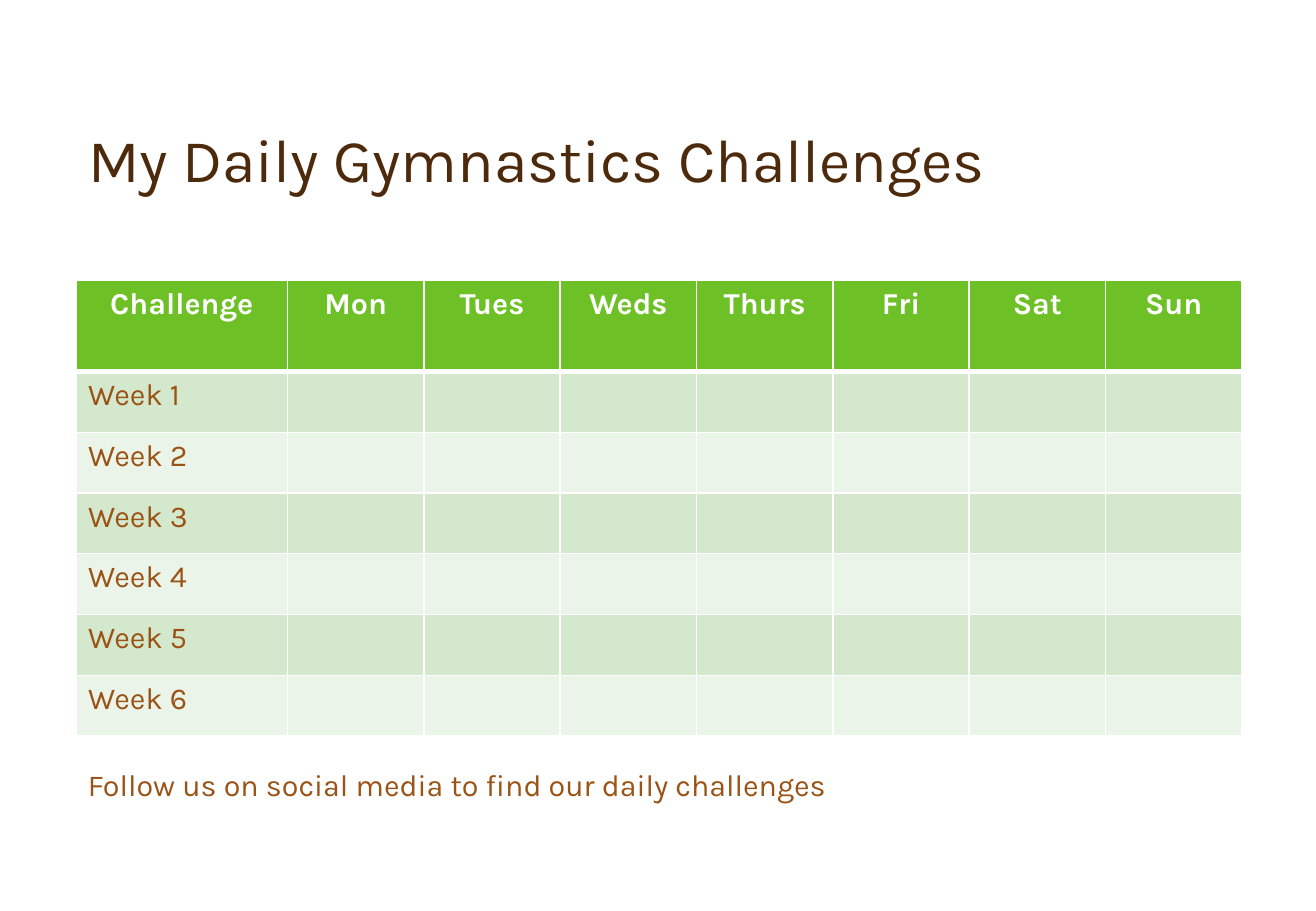
from lxml.etree import SubElement
from pptx import Presentation
from pptx.dml.color import RGBColor
from pptx.enum.text import MSO_ANCHOR as Anchor, MSO_AUTO_SIZE as AutoSize, PP_ALIGN as Align
from pptx.oxml.ns import qn
from pptx.util import Cm, Pt

FONT = "Karla"
DARK_BROWN = RGBColor(0x4D, 0x2A, 0x0B)
BROWN = RGBColor(0x9A, 0x53, 0x15)
WHITE = RGBColor(0xFF, 0xFF, 0xFF)
GREEN = RGBColor(0x6D, 0xC0, 0x25)
BANDS = (RGBColor(0xEB, 0xF4, 0xE8), RGBColor(0xD4, 0xE8, 0xCD))

LEFT, WIDTH = Cm(1.59), Cm(24.37)
HEADINGS = ("Challenge", "Mon", "Tues", "Weds", "Thurs", "Fri", "Sat", "Sun")
WEEKS = 6


def write(frame, text, size, color, bold=False, align=Align.LEFT):
    para = frame.paragraphs[0]
    para.text = text
    para.alignment = align
    font = para.font
    font.name, font.size, font.bold = FONT, Pt(size), bold
    font.color.rgb = color
    return para


def add_title(page, text):
    title = page.shapes.title
    title.left, title.top, title.width, title.height = LEFT, Cm(0.84), Cm(25.5), Cm(3.38)
    frame = title.text_frame
    frame.word_wrap = True
    frame.auto_size = AutoSize.NONE
    frame.vertical_anchor = Anchor.BOTTOM
    write(frame, text, 36, DARK_BROWN).line_spacing = 0.9


def set_borders(cell, top, bottom):
    properties = cell._tc.get_or_add_tcPr()
    for side, width in (("L", 1), ("R", 1), ("T", top), ("B", bottom)):
        line = SubElement(properties, qn(f"a:ln{side}"), w=str(Pt(width)))
        fill = SubElement(line, qn("a:solidFill"))
        SubElement(fill, qn("a:srgbClr"), val=str(WHITE))


def fill_cell(cell, color, top=1, bottom=1):
    set_borders(cell, top, bottom)
    cell.fill.solid()
    cell.fill.fore_color.rgb = color


def add_planner(page):
    frame = page.shapes.add_table(WEEKS + 1, len(HEADINGS), LEFT, Cm(5.87), WIDTH, Cm(9.52))
    table = frame.table
    for index, column in enumerate(table.columns):
        column.width = Cm(2.85) if index else Cm(4.42)
    for index, row in enumerate(table.rows):
        row.height = Cm(1.27) if index else Cm(1.9)

    for column, heading in enumerate(HEADINGS):
        cell = table.cell(0, column)
        fill_cell(cell, GREEN, bottom=3)
        write(cell.text_frame, heading, 18, WHITE, True, Align.CENTER)
    for week in range(1, WEEKS + 1):
        for column in range(len(HEADINGS)):
            fill_cell(table.cell(week, column), BANDS[week % 2], top=3 if week == 1 else 1)
        write(table.cell(week, 0).text_frame, f"Week {week}", 18, BROWN)


def add_note(page, text):
    box = page.shapes.add_textbox(LEFT, Cm(15.9), WIDTH, Cm(0.79))
    frame = box.text_frame
    frame.word_wrap = True
    frame.auto_size = AutoSize.SHAPE_TO_FIT_TEXT
    write(frame, text, 18, BROWN)


def main():
    deck = Presentation()
    deck.slide_width, deck.slide_height = Cm(27.51), Cm(19.05)
    page = deck.slides.add_slide(deck.slide_layouts.get_by_name("Title Only"))
    add_title(page, "My Daily Gymnastics Challenges")
    add_planner(page)
    add_note(page, "Follow us on social media to find our daily challenges")
    deck.save("out.pptx")


if __name__ == "__main__":
    main()
